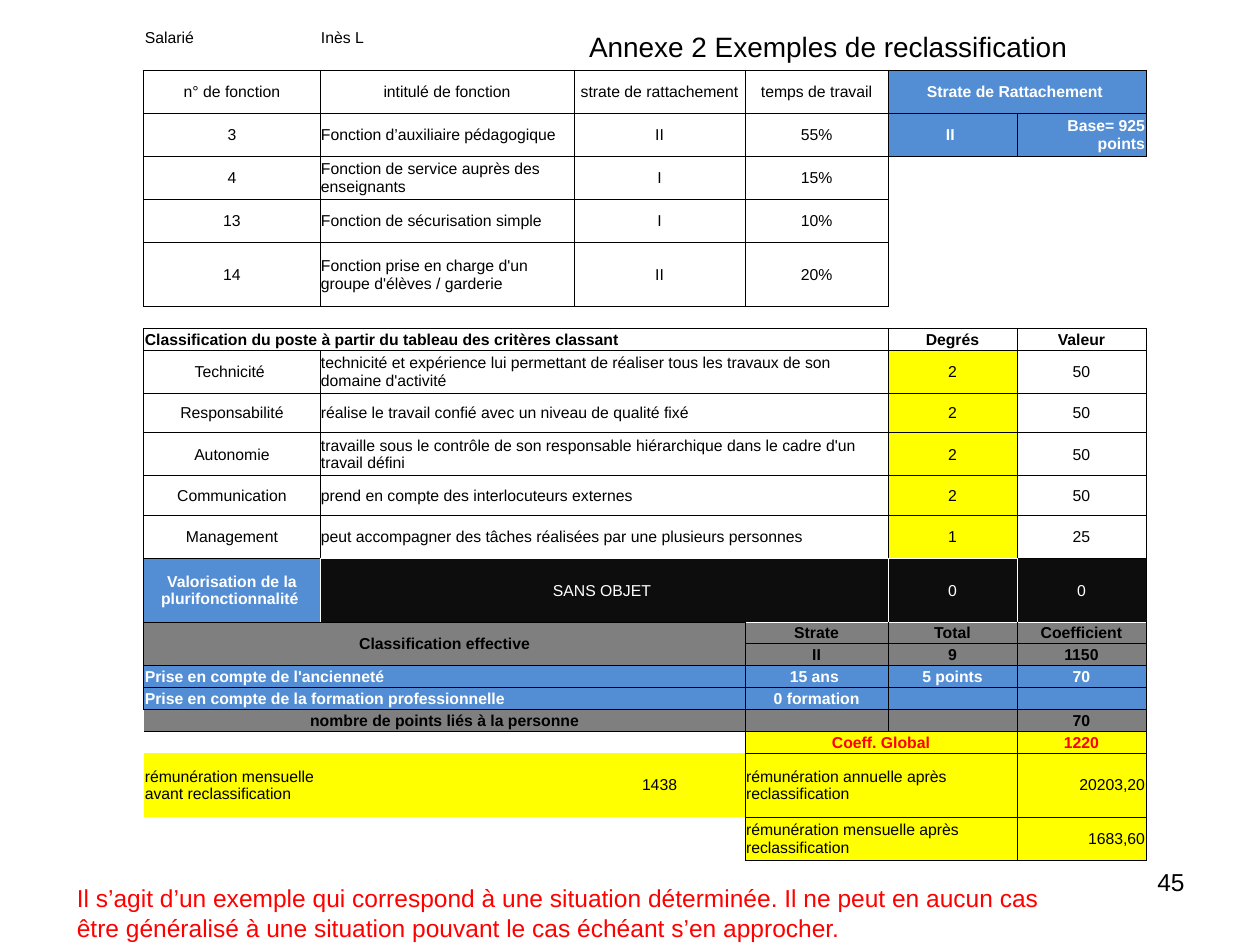
from dataclasses import dataclass, field
from typing import NamedTuple

from lxml import etree
from pptx import Presentation
from pptx import util as u
from pptx.dml import color
from pptx.enum import shapes, text
from pptx.oxml import ns

FONT = "Arial"
BLACK, WHITE, RED = "000000", "FFFFFF", "FF0000"
BLUE, YELLOW, GREY, DARK = "538ED5", "FFFF00", "7F7F7F", "0D0D0D"
LEFT, CENTER, RIGHT, JUSTIFY = (text.PP_ALIGN.LEFT, text.PP_ALIGN.CENTER,
                                text.PP_ALIGN.RIGHT, text.PP_ALIGN.JUSTIFY)
COLUMN_WIDTHS = [3.55, 5.12, 3.45, 2.88, 2.6, 2.6]
LINE, MEDIUM, DOUBLE, TALL = 0.44, 0.79, 0.87, 1.29
ROW_HEIGHTS = ([LINE] * 2 + [DOUBLE] * 4 + [TALL] + [LINE] * 2
               + [DOUBLE, MEDIUM] * 2 + [DOUBLE, TALL] + [LINE] * 6 + [TALL, DOUBLE])


class Edge(NamedTuple):
    color: str
    width: float = 0.5


class Look(NamedTuple):
    fill: str | None = None
    color: str = BLACK
    bold: bool = False


PLAIN, HEADING = Look(), Look(bold=True)
BLUE_BOLD, GREY_BOLD = Look(BLUE, WHITE, True), Look(GREY, BLACK, True)
DARK_PLAIN, YELLOW_PLAIN = Look(DARK, WHITE), Look(YELLOW)
TOTAL = Look(YELLOW, RED, True)
THIN, LIGHT = Edge(BLACK), Edge(WHITE)
SIDES = {"L": (0, -1, "R"), "R": (0, 1, "L"), "T": (-1, 0, "B"), "B": (1, 0, "T")}


@dataclass
class Entry:
    row: int
    column: int
    text: str
    look: Look = PLAIN
    align: text.PP_ALIGN = CENTER
    columns: int = 1
    rows: int = 1
    bordered: bool = True
    edges: dict[str, Edge | None] = field(default_factory=dict)

    def positions(self) -> list[tuple[int, int]]:
        return [(row, column) for row in range(self.row, self.row + self.rows)
                for column in range(self.column, self.column + self.columns)]

    def edge(self, side: str) -> Edge | None:
        return self.edges.get(side, THIN if self.bordered else None)


FUNCTIONS = [
    ("3", "Fonction d’auxiliaire pédagogique", "II", "55%"),
    ("4", "Fonction de service auprès des enseignants", "I", "15%"),
    ("13", "Fonction de sécurisation simple", "I", "10%"),
    ("14", "Fonction prise en charge d'un groupe d'élèves / garderie", "II", "20%"),
]
CRITERIA = [
    ("Technicité ", "technicité et expérience lui permettant de réaliser tous les "
     "travaux de son domaine d'activité", "2", "50"),
    ("Responsabilité", "réalise le travail confié avec un niveau de qualité fixé", "2", "50"),
    ("Autonomie", "travaille sous le contrôle de son responsable hiérarchique dans le "
     "cadre d'un travail défini", "2", "50"),
    ("Communication", "prend en compte des interlocuteurs externes", "2", "50"),
    ("Management", "peut accompagner des tâches réalisées par une plusieurs personnes",
     "1", "25"),
]


def line_of(row: int, column: int, texts: list[str], look: Look, **options) -> list[Entry]:
    """Single-column entries side by side, from the given column on."""
    return [Entry(row, column + i, value, look, **options) for i, value in enumerate(texts)]


def build_entries() -> list[Entry]:
    entries = line_of(0, 0, ["Salarié", "Inès L"], PLAIN, align=LEFT, bordered=False)
    entries += line_of(2, 0, ["n° de fonction", "intitulé de fonction",
                              "strate de rattachement", "temps de travail"], PLAIN)
    entries += [Entry(2, 4, "Strate de Rattachement ", BLUE_BOLD, columns=2),
                Entry(3, 4, "II ", BLUE_BOLD),
                Entry(3, 5, "Base= 925 points", BLUE_BOLD, RIGHT)]
    for row, (number, title, level, share) in enumerate(FUNCTIONS, 3):
        entries += [Entry(row, 0, number), Entry(row, 1, title, align=LEFT),
                    Entry(row, 2, level), Entry(row, 3, share)]

    entries.append(Entry(8, 0, "Classification du poste à partir du tableau des critères "
                               "classant", HEADING, JUSTIFY, columns=4))
    entries += line_of(8, 4, ["Degrés", "Valeur"], HEADING)
    for row, (name, description, degree, value) in enumerate(CRITERIA, 9):
        name_edges = {"T": Edge(BLACK, 1)} if row == 10 else {}
        entries += [Entry(row, 0, name, edges=name_edges),
                    Entry(row, 1, description, align=LEFT, columns=3),
                    Entry(row, 4, degree, YELLOW_PLAIN), Entry(row, 5, value)]

    entries += [
        Entry(14, 0, "Valorisation de la plurifonctionnalité ", BLUE_BOLD),
        Entry(14, 1, "SANS OBJET ", DARK_PLAIN, columns=3, edges={"L": LIGHT, "T": LIGHT}),
        Entry(14, 4, "0", DARK_PLAIN, edges=dict.fromkeys("LTRB", LIGHT)),
        Entry(14, 5, "0", DARK_PLAIN, edges={"L": LIGHT, "B": LIGHT}),
        Entry(15, 0, "Classification effective", GREY_BOLD, columns=3, rows=2),
        *line_of(15, 3, ["Strate", "Total", "Coefficient"], GREY_BOLD, edges={"T": LIGHT}),
        *line_of(16, 3, ["II", "9", "1150"], GREY_BOLD),
        Entry(17, 0, "Prise en compte de l'ancienneté", BLUE_BOLD, LEFT, columns=3),
        *line_of(17, 3, ["15 ans ", "5 points", "70"], BLUE_BOLD),
        Entry(18, 0, "Prise en compte de la formation professionnelle", BLUE_BOLD, LEFT,
              columns=3),
        *line_of(18, 3, ["0 formation", "", ""], BLUE_BOLD),
        Entry(19, 0, "nombre de points liés à la personne", GREY_BOLD, columns=3,
              edges={"L": None}),
        *line_of(19, 3, ["", "", "70"], GREY_BOLD),
        Entry(20, 3, "Coeff. Global", TOTAL, columns=2),
        Entry(20, 5, "1220", TOTAL),
        Entry(21, 0, "rémunération mensuelle avant reclassification", YELLOW_PLAIN, LEFT,
              bordered=False),
        *line_of(21, 1, ["", "1438"], YELLOW_PLAIN, bordered=False),
    ]
    for row, period, amount in [(21, "annuelle", "20203,20"), (22, "mensuelle", "1683,60")]:
        entries += [Entry(row, 3, f"rémunération {period} après reclassification",
                          YELLOW_PLAIN, LEFT, columns=2),
                    Entry(row, 5, amount, YELLOW_PLAIN, RIGHT)]
    return entries


def rgb(value: str) -> color.RGBColor:
    return color.RGBColor.from_string(value)


def format_paragraph(paragraph, size: float, look: Look, align: text.PP_ALIGN) -> None:
    paragraph.alignment = align
    for run in paragraph.runs:
        run.font.name, run.font.size, run.font.bold = FONT, u.Pt(size), look.bold
        run.font.color.rgb = rgb(look.color)


def collect_edges(entries: list[Entry]) -> dict[tuple[int, int, str], Edge]:
    """Give both cells that share a border the same edge; later entries win."""
    owners = {position: (entry.row, entry.column)
              for entry in entries for position in entry.positions()}
    edges = {}
    for entry in entries:
        own = set(entry.positions())
        for side, (down, across, opposite) in SIDES.items():
            edge = entry.edge(side)
            if edge is None:
                continue
            for position in own:
                neighbour = (position[0] + down, position[1] + across)
                if neighbour in own:
                    continue
                for place in (position, owners[position]):
                    edges[(*place, side)] = edge
                for place in (neighbour, owners.get(neighbour, neighbour)):
                    edges[(*place, opposite)] = edge
    return edges


def draw_edge(cell, index: int, side: str, edge: Edge | None) -> None:
    line = etree.Element(ns.qn(f"a:ln{side}"), w=str(u.Pt(edge.width if edge else 0.5)))
    if edge:
        fill = etree.SubElement(line, ns.qn("a:solidFill"))
        etree.SubElement(fill, ns.qn("a:srgbClr"), val=edge.color)
    else:
        etree.SubElement(line, ns.qn("a:noFill"))
    cell._tc.get_or_add_tcPr().insert(index, line)


def add_classification_table(slide, entries: list[Entry]) -> None:
    table = slide.shapes.add_table(
        len(ROW_HEIGHTS), len(COLUMN_WIDTHS), u.Cm(2.9), u.Cm(0.53),
        u.Cm(sum(COLUMN_WIDTHS)), u.Cm(sum(ROW_HEIGHTS))).table
    table.first_row = table.horz_banding = False
    for column, width in zip(table.columns, COLUMN_WIDTHS):
        column.width = u.Cm(width)
    for row, height in zip(table.rows, ROW_HEIGHTS):
        row.height = u.Cm(height)

    edges = collect_edges(entries)
    for row in range(len(ROW_HEIGHTS)):
        for column in range(len(COLUMN_WIDTHS)):
            cell = table.cell(row, column)
            cell.margin_left = cell.margin_right = cell.margin_top = u.Cm(0.02)
            cell.margin_bottom = 0
            cell.vertical_anchor = text.MSO_ANCHOR.MIDDLE
            cell.fill.background()
            for index, side in enumerate(SIDES):
                draw_edge(cell, index, side, edges.get((row, column, side)))

    for entry in entries:
        cell = table.cell(entry.row, entry.column)
        if entry.columns * entry.rows > 1:
            cell.merge(table.cell(*entry.positions()[-1]))
        if entry.look.fill:
            cell.fill.solid()
            cell.fill.fore_color.rgb = rgb(entry.look.fill)
        cell.text_frame.text = entry.text
        format_paragraph(cell.text_frame.paragraphs[0], 9, entry.look, entry.align)
    for cell in table.iter_cells():
        paragraph = cell.text_frame.paragraphs[0]
        if not paragraph.runs:
            etree.SubElement(paragraph._p, ns.qn("a:endParaRPr"), sz="900")


def write(shape, content: str, size: float, look: Look, align: text.PP_ALIGN) -> None:
    shape.text_frame.word_wrap = True
    shape.text_frame.text = content
    format_paragraph(shape.text_frame.paragraphs[0], size, look, align)


def main() -> None:
    presentation = Presentation()
    presentation.slide_width, presentation.slide_height = u.Cm(25.4), u.Cm(19.05)
    slide = presentation.slides.add_slide(presentation.slide_layouts[6])

    number = slide.shapes.add_textbox(u.Cm(18.21), u.Cm(17.35), u.Cm(5.92), u.Cm(1.32))
    write(number, "45", 14, PLAIN, RIGHT)

    title = slide.shapes.add_shape(shapes.MSO_SHAPE.ROUNDED_RECTANGLE,
                                   u.Cm(8.2), u.Cm(0.41), u.Cm(16.99), u.Cm(1.07))
    title.adjustments[0] = 0.22
    title.shadow.inherit = False
    title.fill.background()
    title.line.fill.background()
    title.text_frame.vertical_anchor = text.MSO_ANCHOR.MIDDLE
    write(title, "Annexe 2 Exemples de reclassification", 16, PLAIN, CENTER)

    warning = slide.shapes.add_textbox(u.Cm(1.3), u.Cm(17.68), u.Cm(20.19), u.Cm(1.45))
    write(warning, "Il s’agit d’un exemple qui correspond à une situation déterminée. Il ne "
          "peut en aucun cas être généralisé à une situation pouvant le cas échéant s’en "
          "approcher.", 14, Look(color=RED), LEFT)

    add_classification_table(slide, build_entries())
    presentation.save("out.pptx")


if __name__ == "__main__":
    main()
